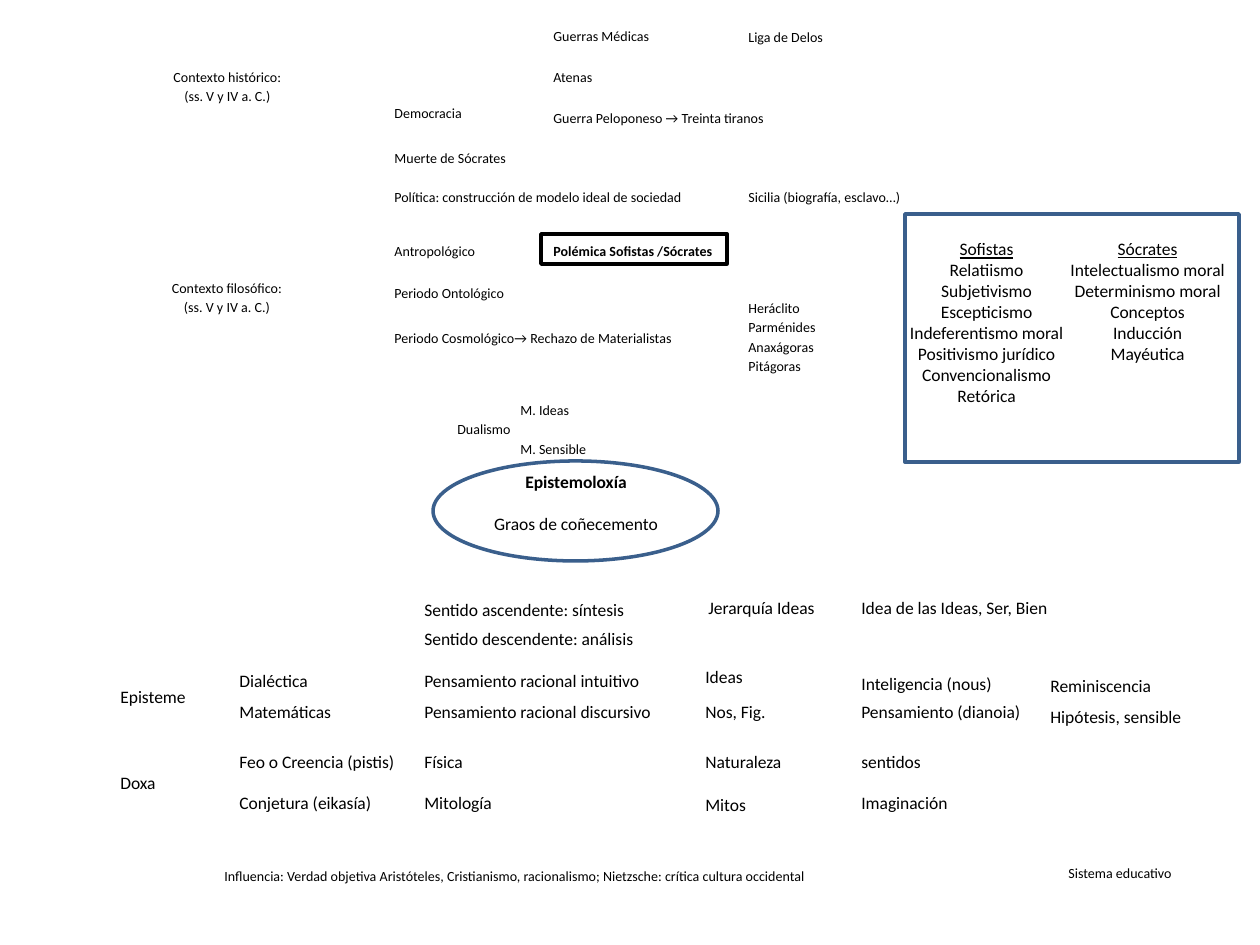
from pptx import Presentation
from pptx.dml.color import RGBColor
from pptx.enum.shapes import MSO_SHAPE
from pptx.enum.text import MSO_ANCHOR, MSO_AUTO_SIZE, PP_ALIGN
from pptx.util import Pt

EMU_PER_PX = 914400 / 126
LEFT, CENTER, JUSTIFY = PP_ALIGN.LEFT, PP_ALIGN.CENTER, PP_ALIGN.JUSTIFY
RECTANGLE, OVAL = MSO_SHAPE.RECTANGLE, MSO_SHAPE.OVAL
TOP, GROW, FIXED = MSO_ANCHOR.TOP, MSO_AUTO_SIZE.SHAPE_TO_FIT_TEXT, MSO_AUTO_SIZE.NONE
COLORS = {"text": "000000", "paper": "FFFFFF", "frame": "3A5F8C", "box": "000000"}
FONT = "Calibri"
SMALL, MEDIUM = 8, 10

# Left edges of the columns
CONTEXT, EVENT, DETAIL = 382, 541, 736
KIND, THOUGHT, OBJECT, FACULTY, ORIGIN = 227, 412, 693, 849, 1038

CONTEXT_NOTES = [  # text, left, top, width, height
    ("Guerras Médicas", EVENT, 19, 131, 30),
    ("Liga de Delos", DETAIL, 20, 111, 30),
    ("Atenas", EVENT, 60, 68, 32),
    ("Democracia", CONTEXT, 96, 106, 33),
    ("Guerra Peloponeso → Treinta tiranos", EVENT, 101, 277, 33),
    ("Muerte de Sócrates", CONTEXT, 141, 155, 28),
    ("Política: construcción de modelo ideal de sociedad", CONTEXT, 180, 329, 25),
    ("Sicilia (biografía, esclavo…)", DETAIL, 180, 188, 25),
    ("Antropológico", CONTEXT, 234, 110, 30),
    ("Periodo Ontológico", CONTEXT, 276, 140, 30),
    ("Periodo Cosmológico→ Rechazo de Materialistas", CONTEXT, 321, 328, 30),
]
KNOWLEDGE_NOTES = [  # text, left, top, width
    ("Sentido ascendente: síntesis", THOUGHT, 593, 242),
    ("Jerarquía Ideas", 696, 591, 137),
    ("Idea de las Ideas, Ser, Bien", FACULTY, 591, 239),
    ("Sentido descendente: análisis", THOUGHT, 622, 242),
    ("Episteme", 108, 680, 100),
    ("Dialéctica", KIND, 664, 149),
    ("Pensamiento racional intuitivo", THOUGHT, 664, 249),
    ("Ideas", OBJECT, 660, 77),
    ("Inteligencia (nous)", FACULTY, 667, 170),
    ("Reminiscencia", ORIGIN, 669, 149),
    ("Matemáticas", KIND, 695, 193),
    ("Pensamiento racional discursivo", THOUGHT, 695, 272),
    ("Nos, Fig.", OBJECT, 695, 98),
    ("Pensamiento (dianoia)", FACULTY, 695, 190),
    ("Hipótesis, sensible", ORIGIN, 700, 169),
    ("Doxa", 108, 766, 69),
    ("Feo o Creencia (pistis)", KIND, 745, 188),
    ("Física", THOUGHT, 745, 66),
    ("Naturaleza", OBJECT, 745, 102),
    ("sentidos", FACULTY, 745, 102),
    ("Conjetura (eikasía)", KIND, 786, 161),
    ("Mitología", THOUGHT, 786, 103),
    ("Mitos", OBJECT, 788, 77),
    ("Imaginación", FACULTY, 786, 126),
]
SOPHISTS = ["Sofistas", "Relatiismo", "Subjetivismo", "Escepticismo",
            "Indeferentismo moral", "Positivismo jurídico", "Convencionalismo", "Retórica"]
SOCRATES = ["Sócrates", "Intelectualismo moral", "Determinismo moral",
            "Conceptos", "Inducción", "Mayéutica"]
NATURE_PHILOSOPHERS = ["Heráclito", "Parménides", "Anaxágoras", "Pitágoras"]


def color(name):
    return RGBColor.from_string(COLORS[name])


def emu(*lengths):
    return [round(length * EMU_PER_PX) for length in lengths]


class ConceptMap:
    """Holds the text style and the slide being filled."""

    def __init__(self, slide):
        self.slide = slide

    def set_lines(self, shape, lines, size, align, spacing=1.0, after=0, grow=False):
        """Fill a shape with one paragraph a line; after is the space below the last."""
        frame = shape.text_frame
        frame.word_wrap = True
        frame.vertical_anchor = TOP
        frame.auto_size = GROW if grow else FIXED
        frame.text = "\n".join(lines)
        for paragraph in frame.paragraphs:
            paragraph.alignment = align
            paragraph.line_spacing = spacing
            for run in paragraph.runs:
                run.font.name = FONT
                run.font.size = Pt(size)
                run.font.color.rgb = color("text")
        frame.paragraphs[-1].space_after = Pt(after)
        return frame.paragraphs

    def text(self, lines, left, top, width, height, size=MEDIUM, align=LEFT, **layout):
        box = self.slide.shapes.add_textbox(*emu(left, top, width, height))
        self.set_lines(box, lines, size, align, **layout)
        return box

    def note(self, lines, left, top, width, height, align=JUSTIFY, after=10):
        self.text(lines, left, top, width, height, SMALL, align, spacing=1.15, after=after)

    def outline(self, kind, left, top, width, height, fill=None, line=None):
        shape = self.slide.shapes.add_shape(kind, *emu(left, top, width, height))
        shape.shadow.inherit = False
        if fill:
            shape.fill.solid()
            shape.fill.fore_color.rgb = color(fill)
        else:
            shape.fill.background()
        if line:
            shape.line.color.rgb = color(line)
            shape.line.width = Pt(2)
        else:
            shape.line.fill.background()
        return shape

    def panel(self, lines, left, top, width, height, fill=None, line=None, after=10, grow=False):
        """Add a rectangle with small justified text."""
        shape = self.outline(RECTANGLE, left, top, width, height, fill, line)
        return self.set_lines(shape, lines, SMALL, JUSTIFY, 1.15, after, grow)

    def headed_list(self, lines, left, top, width, height):
        box = self.text(lines, left, top, width, height, align=CENTER, grow=True)
        box.text_frame.paragraphs[0].runs[0].font.underline = True

    def epistemology(self):
        box = self.text(["Epistemoloxía", "Graos de coñecemento"], 436, 462, 280, 79,
                        align=CENTER, spacing=1.15, after=10, grow=True)
        heading = box.text_frame.paragraphs[0]
        heading.space_after = Pt(10)
        heading.runs[0].font.bold = True
        oval = self.outline(OVAL, 433, 461, 285, 100, line="frame")
        self.slide.shapes.add_group_shape([box, oval])


def main():
    presentation = Presentation()
    presentation.slide_width, presentation.slide_height = emu(1260, 945)
    concept_map = ConceptMap(presentation.slides.add_slide(presentation.slide_layouts[6]))

    period = "(ss. V y IV a. C.)"
    concept_map.note(["Contexto histórico:", period], 159, 60, 137, 50, CENTER)
    concept_map.note(["Contexto filosófico:", period], 142, 271, 170, 53, CENTER)
    for text, *place in CONTEXT_NOTES:
        concept_map.note([text], *place)
    concept_map.note(NATURE_PHILOSOPHERS, DETAIL, 291, 98, 82, after=0)
    dispute = concept_map.panel(["Polémica Sofistas /Sócrates"], EVENT, 234, 186, 30, line="box")
    dispute[0].runs[0].font.bold = True

    concept_map.panel(["Sistema educativo"], 1056, 856, 150, 38, "paper")
    concept_map.panel(["Influencia: Verdad objetiva Aristóteles, Cristianismo, racionalismo; "
                       "Nietzsche: crítica cultura occidental"], 212, 859, 693, 35, "paper")
    concept_map.panel(["\tM. Ideas", "Dualismo", "\tM. Sensible"],
                      445, 393, 228, 72, "paper", after=0, grow=True)
    concept_map.epistemology()

    for text, left, top, width in KNOWLEDGE_NOTES:
        concept_map.text([text], left, top, width, 34, grow=True)

    concept_map.headed_list(SOPHISTS, 895, 232, 183, 183)
    concept_map.headed_list(SOCRATES, 1056, 232, 183, 140)
    concept_map.outline(RECTANGLE, 905, 214, 334, 248, line="frame")
    presentation.save("out.pptx")


if __name__ == "__main__":
    main()
